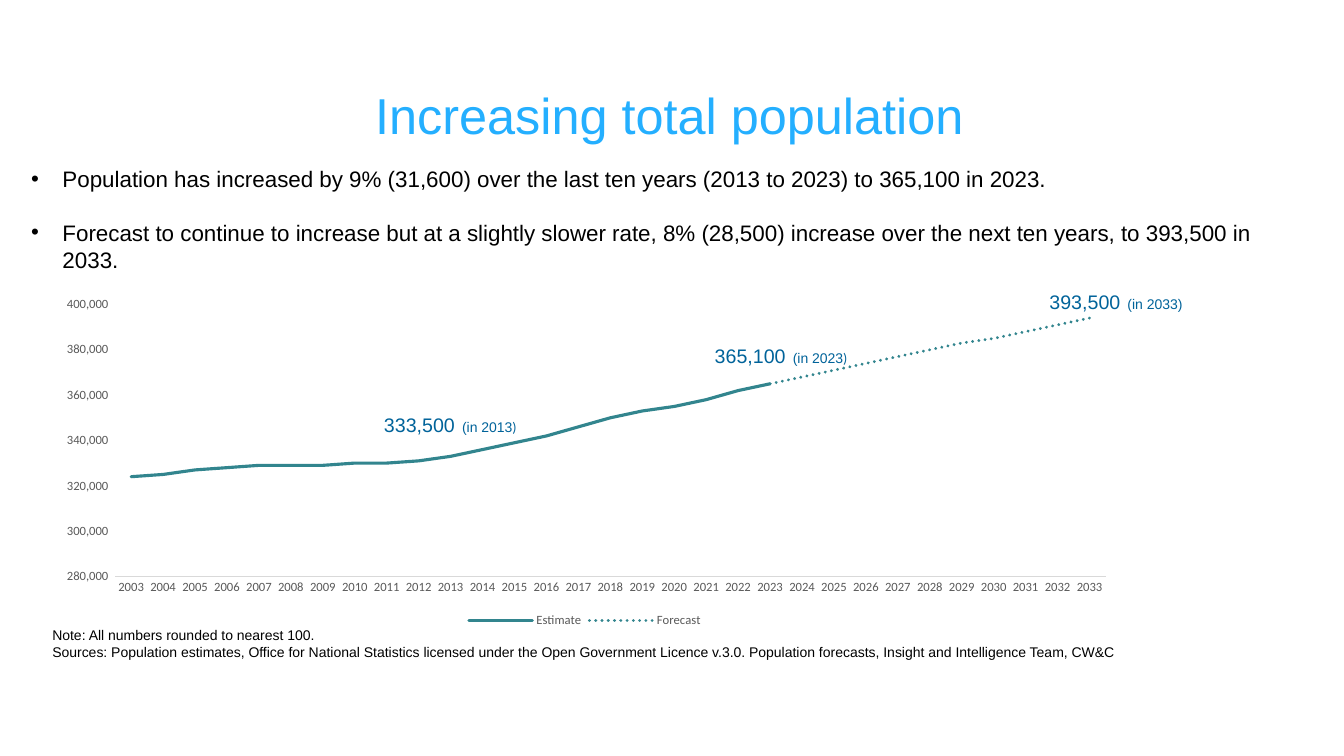
from dataclasses import dataclass

from lxml import etree
from pptx import Presentation
from pptx.chart.data import CategoryChartData
from pptx.dml.color import RGBColor
from pptx.enum.chart import XL_CHART_TYPE as ChartType
from pptx.enum.chart import XL_LEGEND_POSITION as LegendPosition
from pptx.enum.chart import XL_TICK_MARK as TickMark
from pptx.enum.dml import MSO_LINE as LineDash
from pptx.enum.text import MSO_ANCHOR as Anchor
from pptx.enum.text import MSO_AUTO_SIZE as AutoSize
from pptx.enum.text import PP_ALIGN as Align
from pptx.oxml.ns import qn
from pptx.util import Inches, Pt

BLACK, SKY, BLUE = "000000", "24AFFF", "00639A"
TEAL, GREY, PALE = "32858E", "595959", "D9D9D9"


@dataclass
class Callout:
    left: float
    top: float
    population: str
    year: str
    bracket_font: str


CALLOUTS = [
    Callout(3.71, 3.99, "333,500", "2013", "Calibri"),
    Callout(6.99, 3.31, "365,100", "2023", "Calibri"),
    Callout(10.31, 2.77, "393,500", "2033", "Arial"),
]
FINDINGS = [
    "Population has increased by 9% (31,600) over the last ten years (2013 to 2023) to 365,100 in 2023.",
    "Forecast to continue to increase but at a slightly slower rate, 8% (28,500) increase over the next "
    "ten years, to 393,500 in 2033.",
]
FOOTNOTES = [
    "Note: All numbers rounded to nearest 100.",
    "Sources: Population estimates, Office for National Statistics licensed under the Open Government "
    "Licence v.3.0. Population forecasts, Insight and Intelligence Team, CW&C",
]
YEARS = range(2003, 2034)
ESTIMATES = [324000, 325000, 327000, 328000, 329000, 329000, 329000, 330000, 330000, 331000, 333000,
             336000, 339000, 342000, 346000, 350000, 353000, 355000, 358000, 362000, 365000]
FORECASTS = [365000, 368000, 371000, 374000, 377000, 380000, 383000, 385000, 388000, 391000, 394000]


def rgb(color: str) -> RGBColor:
    return RGBColor.from_string(color)


def style_font(font, size: float, color: str, name: str = "Arial") -> None:
    font.size, font.name = Pt(size), name
    font.color.rgb = rgb(color)


def add_run(paragraph, text: str, size: float, color: str, name: str = "Arial") -> None:
    run = paragraph.add_run()
    run.text = text
    style_font(run.font, size, color, name)


def place(shape, left: float, top: float, width: float, height: float) -> None:
    shape.left, shape.top = Inches(left), Inches(top)
    shape.width, shape.height = Inches(width), Inches(height)


def add_text_frame(slide, left: float, top: float, width: float, height: float):
    box = slide.shapes.add_textbox(Inches(left), Inches(top), Inches(width), Inches(height))
    box.text_frame.word_wrap = True
    return box.text_frame


def add_title(slide) -> None:
    title = slide.shapes.title
    place(title, 1.64, 0.81, 10, 0.68)
    frame = title.text_frame
    frame.auto_size, frame.vertical_anchor = AutoSize.NONE, Anchor.BOTTOM
    heading = frame.paragraphs[0]
    heading.alignment, heading.line_spacing = Align.CENTER, 0.9
    add_run(heading, "Increasing total population", 36, SKY)


def add_findings(slide) -> None:
    body = slide.placeholders[1]
    place(body, 0.21, 1.59, 12.9, 1.45)
    frame = body.text_frame
    frame.auto_size = AutoSize.NONE
    for index, finding in enumerate(FINDINGS):
        paragraph = frame.add_paragraph() if index else frame.paragraphs[0]
        properties = paragraph._p.get_or_add_pPr()
        properties.set("marL", str(Inches(0.31)))
        properties.set("indent", str(Inches(-0.31)))
        etree.SubElement(properties, qn("a:buFont")).set("typeface", "Arial")
        etree.SubElement(properties, qn("a:buChar")).set("char", "•")
        paragraph.space_before = Pt(19 if index else 0)
        add_run(paragraph, finding, 16, BLACK)


def add_population_chart(slide) -> None:
    data = CategoryChartData(number_format="#,##0")
    data.categories = [str(year) for year in YEARS]
    data.add_series("Estimate", ESTIMATES + [None] * (len(YEARS) - len(ESTIMATES)))
    data.add_series("Forecast", [None] * (len(YEARS) - len(FORECASTS)) + FORECASTS)
    chart = slide.shapes.add_chart(
        ChartType.LINE, Inches(0.42), Inches(2.88), Inches(10.76), Inches(3.39), data).chart
    style_font(chart.font, 10, BLACK, "Calibri")
    chart.has_title = False

    # Axes
    years, population = chart.category_axis, chart.value_axis
    for axis in (years, population):
        axis.major_tick_mark = axis.minor_tick_mark = TickMark.NONE
        axis.has_major_gridlines = False
        style_font(axis.tick_labels.font, 9, GREY, "Calibri")
    years.format.line.color.rgb = rgb(PALE)
    years.format.line.width = Pt(0.75)
    population.format.line.fill.background()
    population.minimum_scale, population.maximum_scale = 280000, 400000
    population.major_unit = 20000
    population.tick_labels.number_format = '_-* #,##0_-;\\-* #,##0_-;_-* "-"??_-;_-@_'
    population.tick_labels.number_format_is_linked = False

    # Legend
    chart.has_legend = True
    chart.legend.position = LegendPosition.BOTTOM
    chart.legend.include_in_layout = False
    style_font(chart.legend.font, 9, GREY, "Calibri")

    # Series with rounded line ends
    plot = chart.plots[0]
    plot.vary_by_categories = False
    for series, dash in zip(plot.series, (LineDash.SOLID, LineDash.ROUND_DOT)):
        series.smooth = False
        line = series.format.line
        line.color.rgb = rgb(TEAL)
        line.width = Pt(2.25)
        line.dash_style = dash
        series._element.find(qn("c:spPr")).find(qn("a:ln")).set("cap", "rnd")


def add_callout(slide, callout: Callout) -> None:
    paragraph = add_text_frame(slide, callout.left, callout.top, 2.01, 0.4).paragraphs[0]
    add_run(paragraph, callout.population, 14, BLUE)
    add_run(paragraph, " ", 18, BLUE)
    add_run(paragraph, f"(in {callout.year}", 10, BLUE)
    add_run(paragraph, ")", 10, BLUE, callout.bracket_font)


def add_footnotes(slide) -> None:
    frame = add_text_frame(slide, 0.42, 6.17, 12.21, 0.44)
    for index, footnote in enumerate(FOOTNOTES):
        paragraph = frame.add_paragraph() if index else frame.paragraphs[0]
        add_run(paragraph, footnote, 10, BLACK)


def main() -> None:
    presentation = Presentation()
    presentation.slide_width, presentation.slide_height = Inches(13.33), Inches(7.5)
    slide = presentation.slides.add_slide(presentation.slide_layouts[1])
    add_title(slide)
    add_findings(slide)
    add_population_chart(slide)
    for callout in CALLOUTS:
        add_callout(slide, callout)
    add_footnotes(slide)
    presentation.save("out.pptx")


if __name__ == "__main__":
    main()
